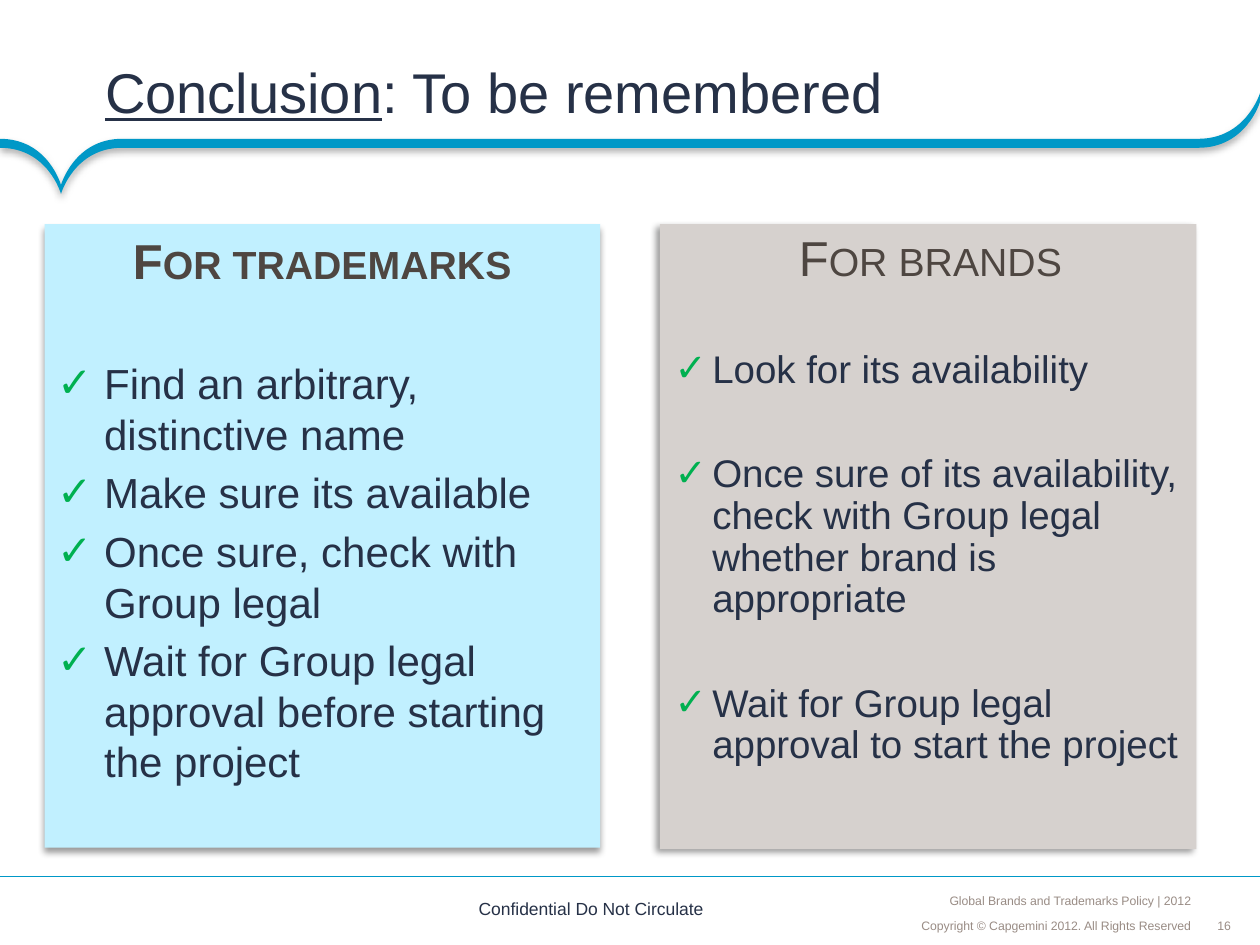
from pptx import Presentation
from pptx.dml.color import RGBColor
from pptx.enum.shapes import MSO_CONNECTOR as CONN
from pptx.enum.text import MSO_ANCHOR as ANCHOR, MSO_AUTO_SIZE as FIT, PP_ALIGN as ALIGN
from pptx.oxml import parse_xml
from pptx.oxml.ns import nsdecls, qn
from pptx.util import Cm, Pt

BLUE = RGBColor(0x00, 0x98, 0xC7)
NAVY = RGBColor(0x26, 0x31, 0x47)
BROWN = RGBColor(0x4E, 0x46, 0x41)
GREY = RGBColor(0x99, 0x8C, 0x85)
SKY = RGBColor(0xC1, 0xF0, 0xFF)
STONE = RGBColor(0xD6, 0xD1, 0xCE)
GREEN = RGBColor(0x00, 0xB0, 0x50)
BLACK = RGBColor(0x00, 0x00, 0x00)


def apply(obj, formats):
    for name, value in formats.items():
        setattr(obj, name, value)


def place(sp, left, top, width, height):
    apply(sp, dict(left=Cm(left), top=Cm(top), width=Cm(width), height=Cm(height)))


def set_frame(tf, insets, **formats):
    sides = ("margin_left", "margin_top", "margin_right", "margin_bottom")
    apply(tf, dict(zip(sides, map(Cm, insets))))
    apply(tf, dict(word_wrap=True, auto_size=FIT.NONE) | formats)


def add_run(p, text, size, color, **formats):
    r = p.add_run()
    r.text = text
    apply(r.font, dict(name="Arial", size=Pt(size)) | formats)
    r.font.color.rgb = color
    return r


def add_shadow(sp, alpha, dist, angle):
    sp._element.spPr.append(parse_xml(
        f'<a:effectLst {nsdecls("a")}><a:outerShdw blurRad="{Pt(4)}" dist="{Pt(dist)}" '
        f'dir="{angle * 60000}" algn="t" rotWithShape="0"><a:srgbClr val="{BLACK}">'
        f'<a:alpha val="{alpha * 1000}"/></a:srgbClr></a:outerShdw></a:effectLst>'))


def set_bullet(p, indent, char=None):
    pPr = p._p.get_or_add_pPr()
    pPr.set("marL", str(Cm(indent)))
    pPr.set("indent", str(-Cm(indent)))
    if char is None:
        pPr.append(parse_xml(f'<a:buNone {nsdecls("a")}/>'))
        return
    for xml in (f'<a:buClr {nsdecls("a")}><a:srgbClr val="{GREEN}"/></a:buClr>',
                f'<a:buFont {nsdecls("a")} typeface="Arial"/>',
                f'<a:buChar {nsdecls("a")} char="{char}"/>'):
        pPr.append(parse_xml(xml))


def curve_segments(sp):
    lines = list(sp._element.iter(qn("a:lnTo")))
    for i in range(0, len(lines), 3):
        curve = parse_xml(f'<a:cubicBezTo {nsdecls("a")}/>')
        lines[i].addprevious(curve)
        for line in lines[i:i + 3]:
            curve.append(line[0])
            line.getparent().remove(line)


def add_swoosh(s):
    right, mid, flat, bend = 25.4, 1.23, 2.46, 24.16
    line, tip, rise, thick = 2.8, 3.73, 1.88, 0.18
    low, low_tip, low_rise = line + thick, tip + thick, rise + thick
    start = (bend, line)
    segments = (
        ((flat, line),) * 3,
        ((1.5, line), (mid, tip), (mid, tip)),
        ((mid, tip), (0.97, line), (0, line)),
        ((0, low),) * 3,
        ((0.97, low), (mid, low_tip), (mid, low_tip)),
        ((mid, low_tip), (1.5, low), (flat, low)),
        ((bend, low),) * 3,
        ((25.12, low), (right, low_rise), (right, low_rise)),
        ((right, rise),) * 3,
        ((right, rise), (25.12, line), start),
    )
    fb = s.shapes.build_freeform(*map(Cm, start))
    fb.add_line_segments([(Cm(x), Cm(y)) for segment in segments for x, y in segment])
    sp = fb.convert_to_shape()
    curve_segments(sp)
    sp.fill.solid()
    sp.fill.fore_color.rgb = BLUE
    sp.line.fill.background()
    add_shadow(sp, 31, 2, 90)


def add_rule(s, y):
    line = s.shapes.add_connector(CONN.STRAIGHT, Cm(25.4), Cm(y), Cm(0), Cm(y))
    line.line.color.rgb = BLUE
    line.line.width = Pt(0.75)
    line._element.spPr.append(parse_xml(f'<a:effectLst {nsdecls("a")}/>'))


def add_label(s, text, box, size, color, inset, anchor, align=ALIGN.RIGHT):
    sp = s.shapes.add_textbox(*map(Cm, box))
    set_frame(sp.text_frame, inset, vertical_anchor=anchor, word_wrap=False)
    p = sp.text_frame.paragraphs[0]
    p.alignment = align
    add_run(p, text, size, color)


def fill_title(sp):
    place(sp, 1.29, 0, 22.86, 3.89)
    set_frame(sp.text_frame, (0.83, 0.1, 0.46, 0.1), vertical_anchor=ANCHOR.MIDDLE)
    p = sp.text_frame.paragraphs[0]
    apply(p, dict(alignment=ALIGN.LEFT, line_spacing=0.85))
    add_run(p, "Conclusion", 32, NAVY, underline=True)
    add_run(p, ": To be remembered", 32, NAVY)


def fill_panel(sp, box, color, angle, insets, heading, bold, items,
               size, indent, spacing, heading_gap, item_gap):
    place(sp, *box)
    sp.fill.solid()
    sp.fill.fore_color.rgb = color
    add_shadow(sp, 40, 3, angle)
    tf = sp.text_frame
    set_frame(tf, insets, vertical_anchor=ANCHOR.TOP)
    p = tf.paragraphs[0]
    set_bullet(p, indent)
    apply(p, dict(alignment=ALIGN.CENTER, line_spacing=spacing,
                  space_before=Pt(0), space_after=Pt(heading_gap)))
    r = add_run(p, heading, 28, BROWN, bold=bold)
    r._r.get_or_add_rPr().set("cap", "small")
    for item in items:
        p = tf.add_paragraph()
        set_bullet(p, indent, "✓")
        apply(p, dict(alignment=ALIGN.LEFT, line_spacing=spacing,
                      space_before=Pt(0), space_after=Pt(item_gap)))
        add_run(p, item, size, NAVY)


def main():
    prs = Presentation()
    apply(prs, dict(slide_width=Cm(25.4), slide_height=Cm(19.05)))
    s = prs.slides.add_slide(prs.slide_layouts[3])
    title, left, right = s.placeholders
    add_swoosh(s)
    add_rule(s, 17.67)
    fill_title(title)
    fill_panel(left, (0.9, 4.52, 11.2, 12.57), SKY, 90, (0.25, 0.13, 0.25, 0.13),
               "For trademarks", True,
               ("Find an arbitrary, distinctive name", "Make sure its available",
                "Once sure, check with Group legal",
                "Wait for Group legal approval before starting the project"),
               24, 0.95, 1.0, 39, 4.8)
    fill_panel(right, (13.3, 4.52, 10.82, 12.6), STONE, 135, (0.3, 0.2, 0.2, 0.2),
               "For brands", False,
               ("Look for its availability",
                "Once sure of its availability, check with Group legal whether brand is appropriate",
                "Wait for Group legal approval to start the project"),
               22, 0.76, 0.9, 36, 36)
    small = (0.1, 0.1, 0.1, 0.1)
    add_label(s, "Global Brands and Trademarks Policy | 2012", (19.2, 17.87, 4.91, 0.53),
              7, GREY, small, ANCHOR.BOTTOM)
    add_label(s, "Copyright © Capgemini 2012. All Rights Reserved", (17.3, 18.39, 6.81, 0.51),
              7, GREY, small, ANCHOR.BOTTOM)
    add_label(s, "16", (24.45, 18.51, 0.46, 0.3), 7, GREY, (0, 0, 0, 0),
              ANCHOR.MIDDLE, ALIGN.CENTER)
    add_label(s, "Confidential Do Not Circulate", (9.5, 18.14, 4.78, 0.36), 10, NAVY,
              (0.1, 0, 0.1, 0), ANCHOR.MIDDLE)
    prs.save("out.pptx")


if __name__ == "__main__":
    main()
